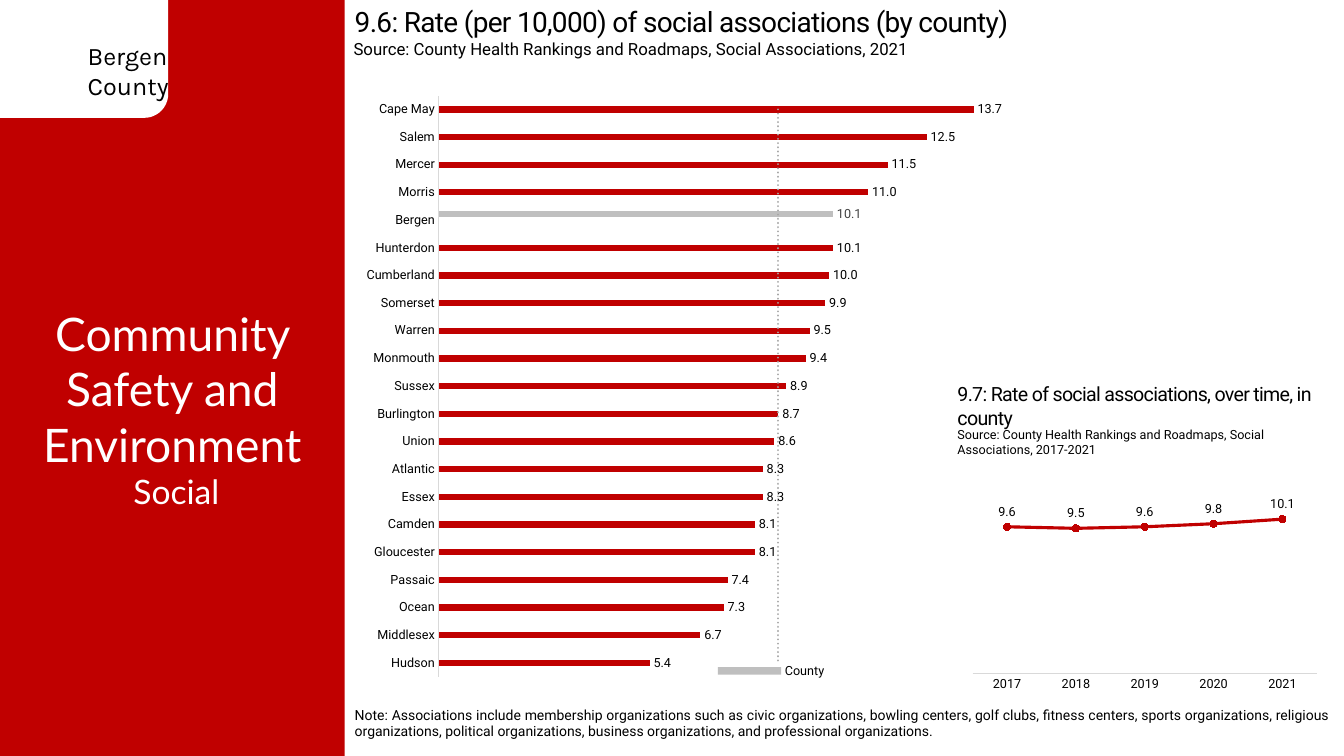
from pptx import Presentation
from pptx.chart.data import CategoryChartData as Data
from pptx.dml.color import RGBColor
from pptx.enum.chart import XL_CHART_TYPE as Kind, XL_LABEL_POSITION as Pos
from pptx.enum.chart import XL_MARKER_STYLE as Mark, XL_TICK_LABEL_POSITION as Labels
from pptx.enum.chart import XL_TICK_MARK as Tick
from pptx.enum.shapes import MSO_SHAPE as Form
from pptx.enum.text import MSO_ANCHOR as Anchor, PP_ALIGN as Align
from pptx.oxml import parse_xml
from pptx.oxml.ns import nsdecls, qn
from pptx.util import Cm, Pt

RED, GREY, PALE = "C00000", "BFBFBF", "D9D9D9"
BLACK, WHITE = "000000", "FFFFFF"
LEVEL = 8.7
RATES = {
    "Cape May": 13.7, "Salem": 12.5, "Mercer": 11.5, "Morris": 11.0,
    "Bergen": 10.1, "Hunterdon": 10.1, "Cumberland": 10.0, "Somerset": 9.9,
    "Warren": 9.5, "Monmouth": 9.4, "Sussex": 8.9, "Burlington": 8.7,
    "Union": 8.6, "Atlantic": 8.3, "Essex": 8.3, "Camden": 8.1,
    "Gloucester": 8.1, "Passaic": 7.4, "Ocean": 7.3, "Middlesex": 6.7,
    "Hudson": 5.4,
}
YEARS = {"2017": 9.6, "2018": 9.5, "2019": 9.6, "2020": 9.8, "2021": 10.1}


def color(code):
    return RGBColor.from_string(code)


def style(font, size, code=BLACK, face="Roboto"):
    font.size, font.name = Pt(size), face
    font.color.rgb = color(code)


def block(slide, form, at, code):
    shape = slide.shapes.add_shape(form, *map(Cm, at))
    shape.shadow.inherit = False
    shape.fill.solid()
    shape.fill.fore_color.rgb = color(code)
    shape.line.fill.background()


def text(slide, at, lines, size, code=BLACK, face="Roboto",
         align=Align.LEFT, anchor=Anchor.TOP, tight=False):
    """Add a text box; tight draws the letters half a point closer."""
    frame = slide.shapes.add_textbox(*map(Cm, at)).text_frame
    frame.word_wrap = True
    frame.vertical_anchor = anchor
    for i, line in enumerate(lines):
        para = frame.add_paragraph() if i else frame.paragraphs[0]
        para.alignment = align
        run = para.add_run()
        run.text = line
        style(run.font, size, code, face)
        if tight:
            run.font._element.set("spc", "-50")


def place(chart, area):
    """Fix the inner plot area as shares of the chart; clear its backdrop."""
    plot = chart.element.find(".//" + qn("c:plotArea"))
    for old in plot.findall(qn("c:layout")):
        plot.remove(old)
    sides = "".join(f'<c:{k} val="{v}"/>' for k, v in zip("xywh", area))
    plot.insert(0, parse_xml(
        f'<c:layout {nsdecls("c")}><c:manualLayout>'
        '<c:layoutTarget val="inner"/><c:xMode val="edge"/>'
        f'<c:yMode val="edge"/>{sides}</c:manualLayout></c:layout>'))
    chart.element.find(qn("c:chart")).addnext(parse_xml(
        f'<c:spPr {nsdecls("c", "a")}><a:noFill/>'
        '<a:ln><a:noFill/></a:ln></c:spPr>'))


def graph(slide, kind, at, cats, rows, top, area):
    data = Data(number_format="0.0")
    data.categories = cats
    for i, vals in enumerate(rows, 1):
        data.add_series(f"Series {i}", vals)
    chart = slide.shapes.add_chart(kind, *map(Cm, at), data).chart
    chart.has_legend = chart.has_title = False
    place(chart, area)
    style(chart.font, 10, face="Calibri")
    chart.plots[0].vary_by_categories = False
    axis = chart.category_axis
    axis.major_tick_mark = axis.minor_tick_mark = Tick.NONE
    axis.format.line.color.rgb = color(PALE)
    axis.format.line.width = Pt(0.75)
    style(axis.tick_labels.font, 9)
    scale = chart.value_axis
    scale.minimum_scale, scale.maximum_scale = 0, top
    scale.has_major_gridlines = False
    return chart


def label(series, pos, code=BLACK):
    tags = series.data_labels
    tags.show_value = True
    tags.number_format = "#,##0.0"
    tags.number_format_is_linked = False
    tags.position = pos
    style(tags.font, 9, code)


def trend(series, code):
    series._element.find(qn("c:cat")).addprevious(parse_xml(
        f'<c:trendline {nsdecls("c", "a")}><c:spPr><a:ln w="19050" cap="rnd">'
        f'<a:solidFill><a:srgbClr val="{code}"/></a:solidFill>'
        '<a:prstDash val="sysDot"/></a:ln></c:spPr>'
        '<c:trendlineType val="linear"/><c:dispRSqr val="0"/>'
        '<c:dispEq val="0"/></c:trendline>'))


def bars(slide):
    home = "Bergen"
    rows = [
        [v if k == home else None for k, v in RATES.items()],
        [None if k == home else v for k, v in RATES.items()],
        [LEVEL] * len(RATES),
    ]
    chart = graph(slide, Kind.BAR_CLUSTERED, (8.89, 1.96, 18.52, 16.66),
                  list(RATES), rows, 16, (0.117, 0.027, 0.85, 0.879))
    chart.category_axis.reverse_order = True
    scale = chart.value_axis
    scale.major_tick_mark = scale.minor_tick_mark = Tick.NONE
    scale.tick_label_position = Labels.NONE
    scale.format.line.fill.background()
    plot = chart.plots[0]
    plot.gap_width, plot.overlap = 150, 0
    county, others, level = plot.series
    for series, fill, ink in ((county, GREY, "404040"), (others, RED, BLACK)):
        series.format.fill.solid()
        series.format.fill.fore_color.rgb = color(fill)
        label(series, Pos.OUTSIDE_END, ink)
    level.format.fill.background()
    trend(level, "A6A6A6")


def line(slide):
    chart = graph(slide, Kind.LINE_MARKERS, (24.33, 11.07, 9.04, 6.48),
                  list(YEARS), [list(YEARS.values())],
                  15, (0.02, 0.02, 0.96, 0.89))
    chart.value_axis.visible = False
    series = chart.plots[0].series[0]
    series.smooth = False
    series.format.line.color.rgb = color(RED)
    series.format.line.width = Pt(2.25)
    dot = series.marker
    dot.style, dot.size = Mark.CIRCLE, 5
    dot.format.fill.solid()
    dot.format.fill.fore_color.rgb = color(RED)
    dot.format.line.color.rgb = color(RED)
    label(series, Pos.ABOVE)


def panel(slide):
    block(slide, Form.RECTANGLE, (0, 0, 8.69, 19.05), RED)
    block(slide, Form.ROUNDED_RECTANGLE, (-0.84, -0.64, 5.08, 3.61), WHITE)
    text(slide, (1.96, 0.89, 2.54, 1.8), ["Bergen", "County"], 18, face="Karla")
    text(slide, (0, 7.57, 8.69, 4.5), ["Community Safety and Environment"],
         33, WHITE, "Lato", Align.CENTER)
    text(slide, (0.1, 11.73, 8.69, 1.27), ["Social"],
         24, WHITE, "Lato", Align.CENTER)


def main():
    deck = Presentation()
    deck.slide_width, deck.slide_height = Cm(33.87), Cm(19.05)
    slide = deck.slides.add_slide(deck.slide_layouts[6])
    panel(slide)
    bars(slide)
    line(slide)
    block(slide, Form.RECTANGLE, (18.09, 16.81, 1.6, 0.19), GREY)
    text(slide, (19.53, 16.58, 1.8, 0.64), ["County"], 9, anchor=Anchor.MIDDLE)
    text(slide, (8.69, 0, 16.97, 1.12),
         ["9.6: Rate (per 10,000) of social associations (by county)"],
         20, tight=True)
    text(slide, (8.66, 0.84, 16.43, 0.76),
         ["Source: County Health Rankings and Roadmaps, "
          "Social Associations, 2021"], 12)
    text(slide, (23.88, 9.5, 10.01, 1.45),
         ["9.7: Rate of social associations, over time, in county"],
         14, tight=True)
    text(slide, (23.88, 10.64, 10.01, 1.02),
         ["Source: County Health Rankings and Roadmaps, "
          "Social Associations, 2017-2021"], 9)
    text(slide, (8.69, 17.58, 25.04, 1.27),
         ["Note: Associations include membership organizations such as civic "
          "organizations, bowling centers, golf clubs, fitness centers, sports "
          "organizations, religious organizations, political organizations, "
          "business organizations, and professional organizations."],
         10, align=Align.JUSTIFY, anchor=Anchor.MIDDLE)
    deck.save("out.pptx")


if __name__ == "__main__":
    main()
